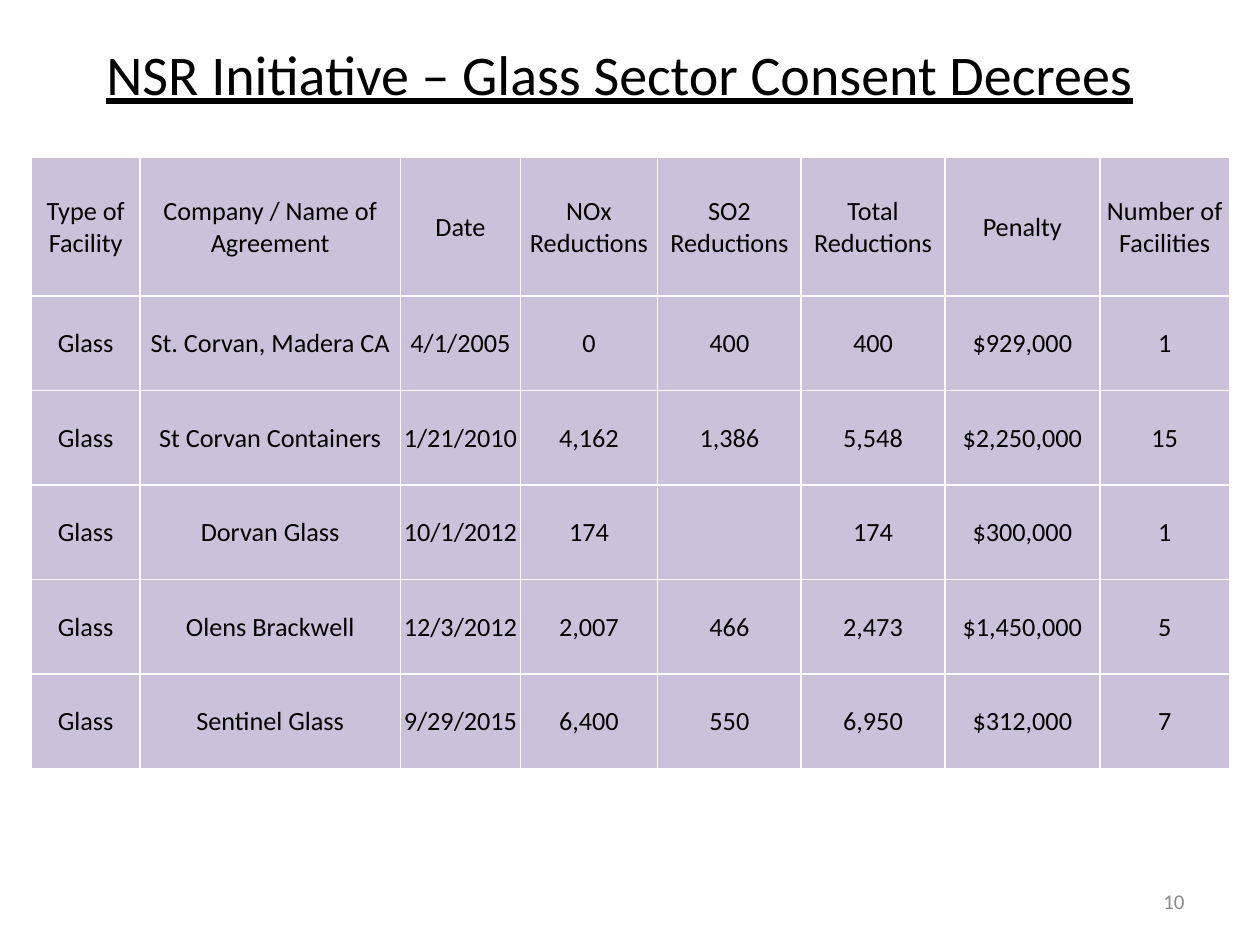
"""Build a slide that tabulates the consent decrees of the glass sector."""
from dataclasses import astuple, dataclass
from typing import Any

from lxml.etree import SubElement
from pptx import Presentation
from pptx.dml.color import RGBColor
from pptx.enum.text import MSO_ANCHOR, PP_ALIGN
from pptx.oxml.ns import qn
from pptx.util import Inches, Pt

INK = "000000"
LILAC = "CCC1DA"
WHITE = "FFFFFF"
GREY = "8C8C8C"
HEADINGS = {
    "Type of Facility": 0.86,
    "Company / Name of Agreement": 2.07,
    "Date": 0.95,
    "NOx Reductions": 1.09,
    "SO2 Reductions": 1.14,
    "Total Reductions": 1.14,
    "Penalty": 1.23,
    "Number of Facilities": 1.03,
}
HEADING_HEIGHT = 1.1
DECREE_HEIGHT = 0.75
CELL_FORMAT = {
    "vertical_anchor": MSO_ANCHOR.MIDDLE,
    "margin_left": Inches(0.01),
    "margin_right": Inches(0.01),
    "margin_top": Inches(0.01),
    "margin_bottom": Inches(0),
}


@dataclass
class Decree:
    facility: str
    agreement: str
    date: str
    nox: str
    so2: str
    total: str
    penalty: str
    facilities: str


DECREES = [
    Decree("Glass", "St. Corvan, Madera CA", "4/1/2005", "0", "400", "400", "$929,000", "1"),
    Decree("Glass", "St Corvan Containers", "1/21/2010", "4,162", "1,386", "5,548", "$2,250,000", "15"),
    Decree("Glass", "Dorvan Glass", "10/1/2012", "174", "", "174", "$300,000", "1"),
    Decree("Glass", "Olens Brackwell", "12/3/2012", "2,007", "466", "2,473", "$1,450,000", "5"),
    Decree("Glass", "Sentinel Glass", "9/29/2015", "6,400", "550", "6,950", "$312,000", "7"),
]


def color(code: str) -> RGBColor:
    return RGBColor.from_string(code)


def apply_format(target: Any, values: dict[str, Any]) -> None:
    for attribute, value in values.items():
        setattr(target, attribute, value)


def write(frame: Any, text: str, size: float, ink: str, alignment: PP_ALIGN, underline: bool = False) -> None:
    paragraph = frame.paragraphs[0]
    paragraph.alignment = alignment
    paragraph.font.size = Pt(size)
    if text:
        run = paragraph.add_run()
        run.text = text
        apply_format(run.font, {"name": "Calibri", "size": Pt(size), "underline": underline})
        run.font.color.rgb = color(ink)


def add_borders(cell: Any) -> None:
    properties = cell._tc.get_or_add_tcPr()
    for side in ("lnL", "lnR", "lnT", "lnB"):
        border = SubElement(properties, qn(f"a:{side}"), w=str(Pt(1)))
        SubElement(SubElement(border, qn("a:solidFill")), qn("a:srgbClr"), val=WHITE)


def fill_cell(cell: Any, text: str) -> None:
    apply_format(cell, CELL_FORMAT)
    add_borders(cell)
    cell.fill.solid()
    cell.fill.fore_color.rgb = color(LILAC)
    write(cell.text_frame, text, 15, INK, PP_ALIGN.CENTER)


def add_title(slide: Any) -> None:
    title = slide.shapes.title
    apply_format(title, {"left": Inches(0.42), "top": Inches(0.33), "width": Inches(9), "height": Inches(0.5)})
    title.text_frame.vertical_anchor = MSO_ANCHOR.MIDDLE
    write(title.text_frame, "NSR Initiative – Glass Sector Consent Decrees", 32, INK, PP_ALIGN.CENTER, True)


def add_decree_table(slide: Any) -> None:
    rows = [tuple(HEADINGS), *map(astuple, DECREES)]
    height = HEADING_HEIGHT + DECREE_HEIGHT * len(DECREES)
    table = slide.shapes.add_table(
        len(rows), len(HEADINGS), Inches(0.25), Inches(1.25), Inches(9.5), Inches(height)
    ).table
    for column, width in zip(table.columns, HEADINGS.values()):
        column.width = Inches(width)
    for index, (row, texts) in enumerate(zip(table.rows, rows)):
        row.height = Inches(DECREE_HEIGHT if index else HEADING_HEIGHT)
        for cell, text in zip(row.cells, texts):
            fill_cell(cell, text)


def add_page_number(slide: Any) -> None:
    frame = slide.shapes.add_textbox(Inches(7.17), Inches(6.95), Inches(2.33), Inches(0.4)).text_frame
    apply_format(frame, {"word_wrap": True, "vertical_anchor": MSO_ANCHOR.MIDDLE})
    write(frame, "10", 12, GREY, PP_ALIGN.RIGHT)


def main() -> None:
    deck = Presentation()
    apply_format(deck, {"slide_width": Inches(10), "slide_height": Inches(7.5)})
    slide = deck.slides.add_slide(deck.slide_layouts[5])
    add_title(slide)
    add_decree_table(slide)
    add_page_number(slide)
    deck.save("out.pptx")


if __name__ == "__main__":
    main()
